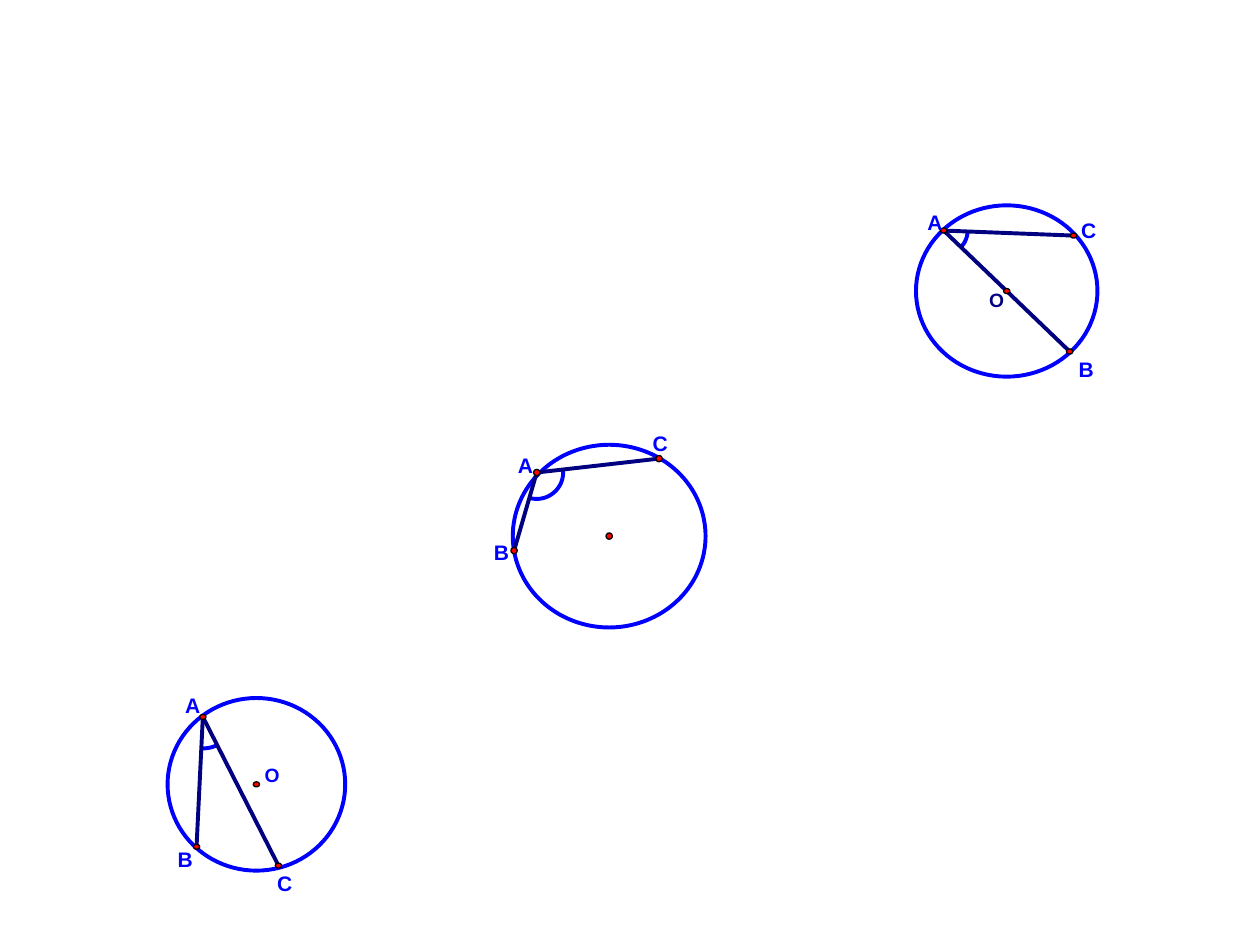
"""Builds a slide with three inscribed angles, each drawn in its own circle."""
from dataclasses import dataclass
from math import atan2, cos, sin

from lxml import etree
from pptx import Presentation
from pptx.dml.color import RGBColor
from pptx.enum.shapes import MSO_CONNECTOR, MSO_SHAPE
from pptx.enum.text import MSO_AUTO_SIZE, PP_ALIGN
from pptx.oxml.ns import qn
from pptx.util import Inches, Pt

OVAL = MSO_SHAPE.OVAL
STRAIGHT = MSO_CONNECTOR.STRAIGHT
FIT_TEXT = MSO_AUTO_SIZE.SHAPE_TO_FIT_TEXT
LEFT, CENTER = PP_ALIGN.LEFT, PP_ALIGN.CENTER


@dataclass(frozen=True)
class Theme:
    """Colours, type and line sizes."""
    blue: RGBColor = RGBColor(0, 0, 255)
    navy: RGBColor = RGBColor(0, 0, 128)
    red: RGBColor = RGBColor(255, 0, 0)
    black: RGBColor = RGBColor(0, 0, 0)
    font: str = "Arial"
    vertex_size: int = 12
    center_size: int = 11
    stroke: float = 2.25


THEME = Theme()
DOT_WIDTH = 0.05
LABEL_WIDTH, LABEL_HEIGHT = 0.12, 0.2
ARC_STEPS = 16

FIGURES = [
    {
        "circle": (1.33, 5.54, 1.41, 1.37), "arc_radius": 0.25,
        "points": {"A": (1.61, 5.69), "B": (1.56, 6.72), "C": (2.21, 6.87)},
        "labels": {"O": (2.1, 6.06), "A": (1.47, 5.5), "B": (1.41, 6.72), "C": (2.2, 6.91)},
        "center_color": THEME.blue, "align": LEFT, "dot_height": 0.04,
    },
    {
        "circle": (4.07, 3.53, 1.53, 1.45), "arc_radius": 0.21,
        "points": {"A": (4.26, 3.75), "B": (4.08, 4.37), "C": (5.23, 3.64)},
        "labels": {"A": (4.11, 3.59), "B": (3.92, 4.28), "C": (5.18, 3.42)},
        "center_color": THEME.blue, "align": CENTER, "dot_height": 0.05,
    },
    {
        "circle": (7.27, 1.63, 1.44, 1.36), "arc_radius": 0.19,
        "points": {"A": (7.49, 1.83), "B": (8.49, 2.79), "C": (8.52, 1.87)},
        "labels": {"O": (7.85, 2.29), "A": (7.36, 1.66), "B": (8.56, 2.83), "C": (8.58, 1.73)},
        "center_color": THEME.navy, "align": LEFT, "dot_height": 0.04,
    },
]


def outline(shape, color, width):
    shape.shadow.inherit = False
    shape.line.color.rgb = color
    shape.line.width = Pt(width)


def add_angle_arc(group, points, radius):
    x, y = points["A"]
    start, end = (atan2(points[name][1] - y, points[name][0] - x) for name in "CB")
    angles = [start + (end - start) * step / ARC_STEPS for step in range(ARC_STEPS + 1)]
    curve = [(Inches(x + radius * cos(angle)), Inches(y + radius * sin(angle)))
             for angle in angles]
    builder = group.shapes.build_freeform(*curve[0])
    builder.add_line_segments(curve[1:], close=False)
    arc = builder.convert_to_shape()
    arc.fill.background()
    outline(arc, THEME.blue, THEME.stroke)


def add_circle(group, bounds):
    circle = group.shapes.add_shape(OVAL, *map(Inches, bounds))
    circle.fill.background()
    outline(circle, THEME.blue, THEME.stroke)


def add_chord(group, start, end):
    chord = group.shapes.add_connector(STRAIGHT, *map(Inches, start + end))
    chord.line.color.rgb = THEME.navy
    chord.line.width = Pt(THEME.stroke)
    properties = chord._element.find(qn("p:spPr"))
    etree.SubElement(properties, qn("a:effectLst"))


def add_dot(group, center, height):
    x, y = center
    bounds = (x - DOT_WIDTH / 2, y - height / 2, DOT_WIDTH, height)
    dot = group.shapes.add_shape(OVAL, *map(Inches, bounds))
    dot.fill.solid()
    dot.fill.fore_color.rgb = THEME.red
    outline(dot, THEME.black, 0)


def add_label(group, name, corner, figure):
    box = group.shapes.add_textbox(*map(Inches, corner + (LABEL_WIDTH, LABEL_HEIGHT)))
    frame = box.text_frame
    frame.margin_left = frame.margin_right = frame.margin_top = frame.margin_bottom = 0
    frame.word_wrap = False
    frame.auto_size = FIT_TEXT
    frame.text = name
    para = frame.paragraphs[0]
    para.alignment = figure["align"]
    font = para.runs[0].font
    font.name = THEME.font
    font.bold = True
    font.size = Pt(THEME.center_size if name == "O" else THEME.vertex_size)
    font.color.rgb = figure["center_color"] if name == "O" else THEME.blue


def add_figure(page, figure):
    group = page.shapes.add_group_shape()
    points = figure["points"]
    left, top, width, height = figure["circle"]
    add_angle_arc(group, points, figure["arc_radius"])
    add_circle(group, figure["circle"])
    for end in "BC":
        add_chord(group, points["A"], points[end])
    for center in [(left + width / 2, top + height / 2), *points.values()]:
        add_dot(group, center, figure["dot_height"])
    for name, corner in figure["labels"].items():
        add_label(group, name, corner, figure)


def main():
    deck = Presentation()
    deck.slide_width, deck.slide_height = Inches(10), Inches(7.5)
    page = deck.slides.add_slide(deck.slide_layouts[6])
    for figure in FIGURES:
        add_figure(page, figure)
    deck.save("out.pptx")


if __name__ == "__main__":
    main()
